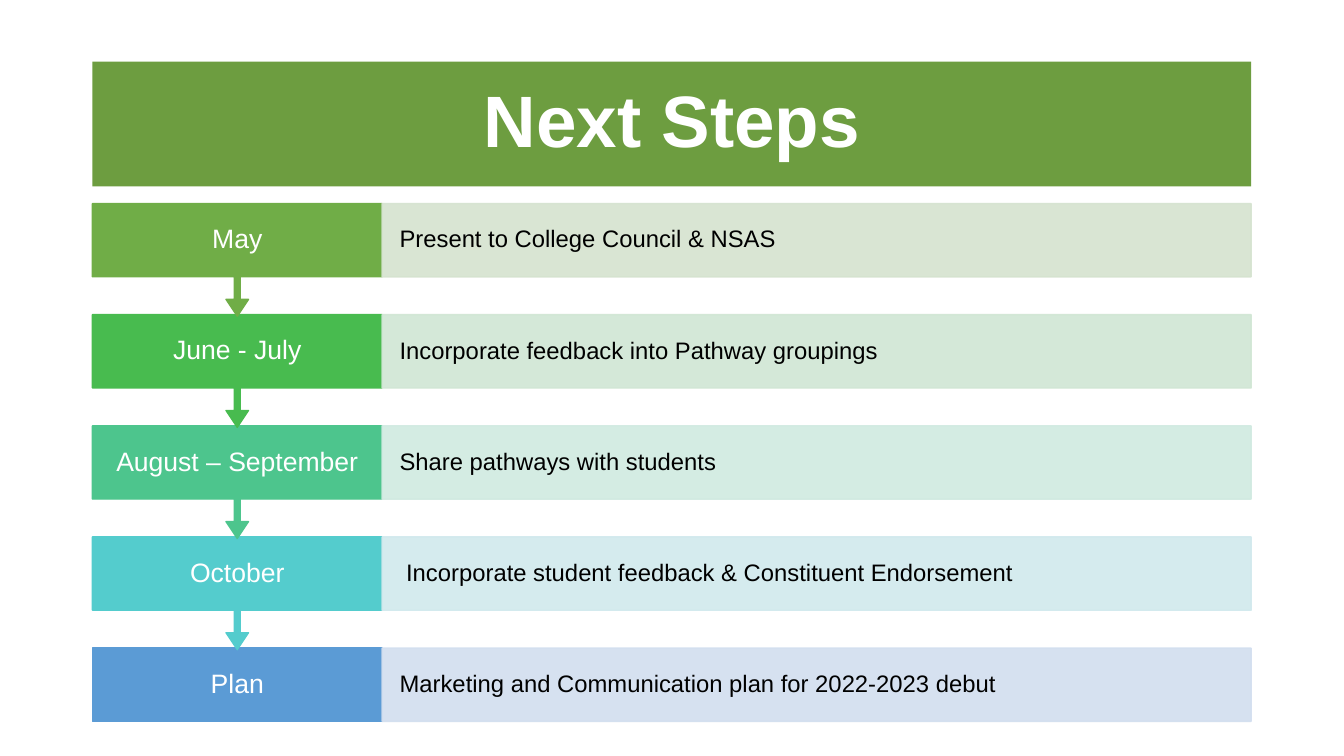
from lxml import etree
from pptx import Presentation
from pptx.dml.color import RGBColor
from pptx.enum.shapes import MSO_SHAPE
from pptx.enum.text import MSO_ANCHOR, MSO_AUTO_SIZE, PP_ALIGN
from pptx.oxml.ns import qn
from pptx.util import Cm, Pt

RECTANGLE = MSO_SHAPE.RECTANGLE
ARROW_CALLOUT = MSO_SHAPE.DOWN_ARROW_CALLOUT
MIDDLE = MSO_ANCHOR.MIDDLE
NO_AUTOFIT = MSO_AUTO_SIZE.NONE
LEFT, CENTER = PP_ALIGN.LEFT, PP_ALIGN.CENTER

FONT = "Arial"
WHITE = RGBColor(0xFF, 0xFF, 0xFF)
BLACK = RGBColor(0x00, 0x00, 0x00)
TITLE_GREEN = RGBColor(0x6D, 0x9D, 0x40)
LEAF, PALE_LEAF = RGBColor(0x70, 0xAD, 0x47), RGBColor(0xD5, 0xE3, 0xCF)
GREEN, PALE_GREEN = RGBColor(0x48, 0xBB, 0x4F), RGBColor(0xD0, 0xE6, 0xD4)
MINT, PALE_MINT = RGBColor(0x4D, 0xC5, 0x8D), RGBColor(0xD0, 0xEA, 0xE1)
AQUA, PALE_AQUA = RGBColor(0x54, 0xCC, 0xCD), RGBColor(0xD1, 0xE9, 0xED)
BLUE, PALE_BLUE = RGBColor(0x5B, 0x9B, 0xD5), RGBColor(0xD2, 0xDE, 0xEF)

# Grid of the timeline, in centimetres
MARGIN_LEFT = 2.33
FIRST_TOP, ROW_PITCH, ROW_HEIGHT = 5.13, 2.8, 1.85
CALLOUT_HEIGHT = 2.84
PERIOD_WIDTH, TASK_WIDTH = 7.3, 21.9
CALLOUT_ADJUSTMENTS = (0.05, 0.1, 0.15, 0.65)

STEPS = [
    ("May", "Present to College Council & NSAS", LEAF, PALE_LEAF),
    ("June - July", "Incorporate feedback into Pathway groupings", GREEN, PALE_GREEN),
    ("August – September", "Share pathways with students", MINT, PALE_MINT),
    ("October", " Incorporate student feedback & Constituent Endorsement", AQUA, PALE_AQUA),
    ("Plan", "Marketing and Communication plan for 2022-2023 debut", BLUE, PALE_BLUE),
]


def write_text(box, text, size, color, align, bold=False):
    frame = box.text_frame
    frame.text = text
    frame.word_wrap = True
    frame.auto_size = NO_AUTOFIT
    frame.vertical_anchor = MIDDLE
    paragraph = frame.paragraphs[0]
    paragraph.alignment = align
    paragraph.line_spacing = 0.9
    font = paragraph.runs[0].font
    font.name, font.size, font.bold = FONT, Pt(size), bold
    font.color.rgb = color


def set_side_margins(box, margin):
    frame = box.text_frame
    frame.margin_left = frame.margin_right = Cm(margin)
    frame.margin_top = frame.margin_bottom = 0


def add_block(slide, preset, left, top, width, height, color):
    block = slide.shapes.add_shape(preset, Cm(left), Cm(top), Cm(width), Cm(height))
    block.shadow.inherit = False
    block.fill.solid()
    block.fill.fore_color.rgb = color
    block.line.color.rgb = color
    block.line.width = Pt(1)
    return block


def make_translucent(block, percent):
    for color in block._element.spPr.iter(qn("a:srgbClr")):
        etree.SubElement(color, qn("a:alpha"), val=str(percent * 1000))


def add_title(slide, text):
    title = slide.shapes.title
    title.left, title.top = Cm(MARGIN_LEFT), Cm(1.55)
    title.width, title.height = Cm(PERIOD_WIDTH + TASK_WIDTH), Cm(3.15)
    title.fill.solid()
    title.fill.fore_color.rgb = TITLE_GREEN
    write_text(title, text, 52, WHITE, CENTER, bold=True)


def add_period(slide, top, text, color, has_arrow):
    preset, height = (ARROW_CALLOUT, CALLOUT_HEIGHT) if has_arrow else (RECTANGLE, ROW_HEIGHT)
    period = add_block(slide, preset, MARGIN_LEFT, top, PERIOD_WIDTH, height, color)
    if has_arrow:
        for index, value in enumerate(CALLOUT_ADJUSTMENTS):
            period.adjustments[index] = value
    write_text(period, text, 19, WHITE, CENTER)
    set_side_margins(period, 0.5)


def add_task(slide, top, text, color):
    task = add_block(slide, RECTANGLE, MARGIN_LEFT + PERIOD_WIDTH, top,
                     TASK_WIDTH, ROW_HEIGHT, color)
    make_translucent(task, 90)
    write_text(task, text, 17, BLACK, LEFT)
    set_side_margins(task, 0.44)


def main():
    presentation = Presentation()
    presentation.slide_width, presentation.slide_height = Cm(33.87), Cm(19.05)
    slide = presentation.slides.add_slide(presentation.slide_layouts[5])

    add_title(slide, "Next Steps")

    # Timeline, built upwards so each arrow tip lies over the step below
    last = len(STEPS) - 1
    for row, (period, task, color, pale) in reversed(list(enumerate(STEPS))):
        top = FIRST_TOP + row * ROW_PITCH
        add_period(slide, top, period, color, has_arrow=row < last)
        add_task(slide, top, task, pale)

    presentation.save("out.pptx")


if __name__ == "__main__":
    main()
